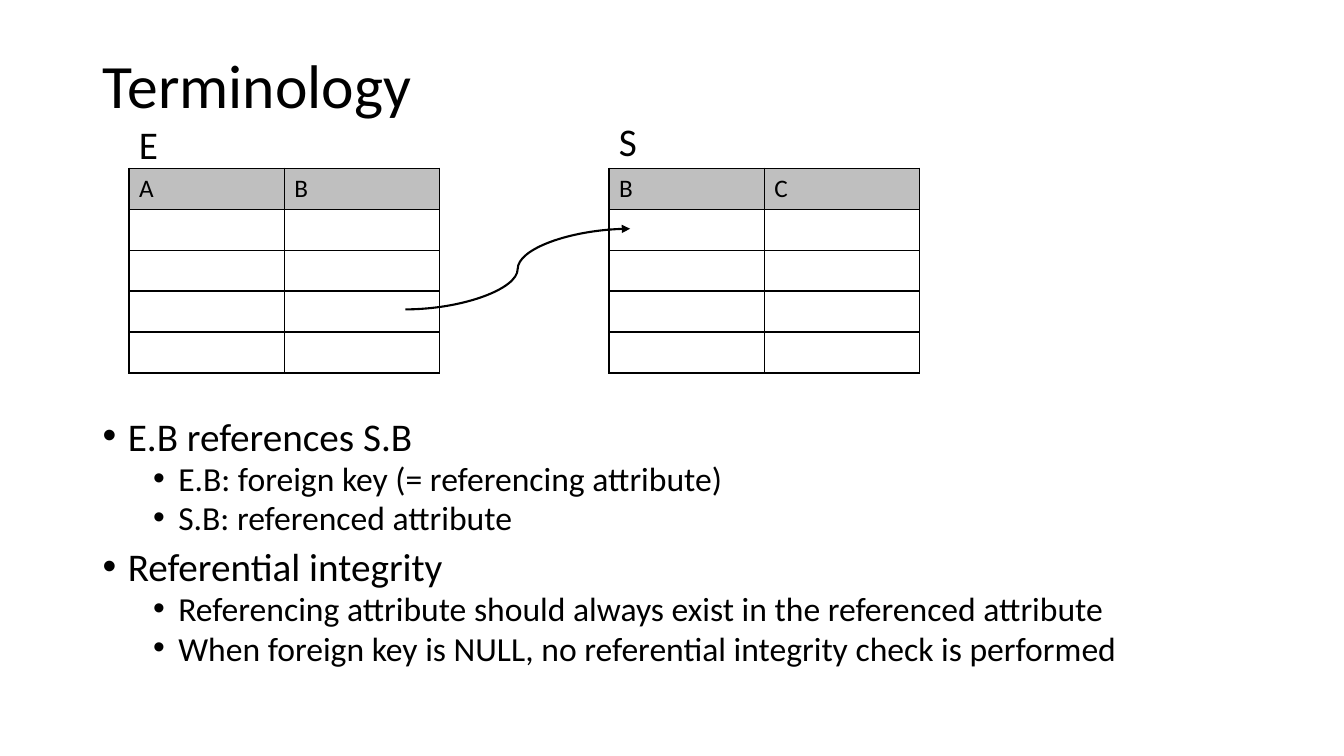
import pptx
import pptx.dml.color
import pptx.enum.shapes
import pptx.enum.text
import pptx.oxml
import pptx.oxml.ns
import pptx.util
from pptx.util import Inches

NAMESPACE = pptx.oxml.ns.nsdecls("a")
BLACK = "000000"
HEADER_GREY = "BFBFBF"


def color(value):
    return pptx.dml.color.RGBColor.from_string(value)


def add_text(para, text, size):
    span = para.add_run()
    span.text = text
    span.font.name = "Calibri"
    span.font.size = pptx.util.Pt(size)
    span.font.color.rgb = color(BLACK)


deck = pptx.Presentation()
deck.slide_width = Inches(13.33)
deck.slide_height = Inches(7.5)
page = deck.slides.add_slide(deck.slide_layouts[5])

title = page.shapes.title
title.left, title.top = Inches(0.92), Inches(0.33)
title.width, title.height = Inches(11.5), Inches(1.09)
title.text_frame.auto_size = pptx.enum.text.MSO_AUTO_SIZE.NONE
title.text_frame.vertical_anchor = pptx.enum.text.MSO_ANCHOR.MIDDLE
title_para = title.text_frame.paragraphs[0]
title_para.alignment = pptx.enum.text.PP_ALIGN.LEFT
title_para.line_spacing = 0.9
add_text(title_para, "Terminology", 44)

# Relations: name, left edge, top of the name, attributes
relations = [
    ("E", 1.28, 1.14, ["A", "B"]),
    ("S", 6.04, 1.11, ["B", "C"]),
]
for name, left, name_top, attributes in relations:
    table = page.shapes.add_table(
        5, 2, Inches(left), Inches(1.67), Inches(3.08), Inches(2.03)).table
    table.first_row = False
    table.horz_banding = False
    for cell in table.iter_cells():
        properties = cell._tc.get_or_add_tcPr()
        for side in ("lnL", "lnR", "lnT", "lnB"):
            properties.append(pptx.oxml.parse_xml(
                f'<a:{side} {NAMESPACE} w="12700"><a:solidFill>'
                f'<a:srgbClr val="{BLACK}"/></a:solidFill></a:{side}>'))
        cell.fill.background()
    for column, attribute in enumerate(attributes):
        header = table.cell(0, column)
        header.fill.solid()
        header.fill.fore_color.rgb = color(HEADER_GREY)
        add_text(header.text_frame.paragraphs[0], attribute, 18)

    label = page.shapes.add_textbox(
        Inches(left), Inches(name_top), Inches(0.39), Inches(0.57))
    label.text_frame.word_wrap = False
    label.text_frame.auto_size = pptx.enum.text.MSO_AUTO_SIZE.SHAPE_TO_FIT_TEXT
    add_text(label.text_frame.paragraphs[0], name, 28)

reference = page.shapes.add_connector(
    pptx.enum.shapes.MSO_CONNECTOR.CURVE,
    Inches(4.02), Inches(3.07), Inches(6.25), Inches(2.27))
reference.line.color.rgb = color(BLACK)
reference.line.width = pptx.util.Pt(1.5)
reference.line._get_or_add_ln().append(
    pptx.oxml.parse_xml(f'<a:tailEnd {NAMESPACE} type="triangle"/>'))
reference._element.spPr.append(
    pptx.oxml.parse_xml(f"<a:effectLst {NAMESPACE}/>"))

# Text and level of each bullet
bullets = [
    ("E.B references S.B", 0),
    ("E.B: foreign key (= referencing attribute)", 1),
    ("S.B: referenced attribute", 1),
    ("Referential integrity", 0),
    ("Referencing attribute should always exist in the referenced attribute", 1),
    ("When foreign key is NULL, no referential integrity check is performed", 1),
]
# Size, space before and left margin of each level
levels = [(28, 10, 0.25), (24, 5, 0.75)]

body = page.shapes.add_textbox(
    Inches(0.92), Inches(4.13), Inches(11.5), Inches(2.63))
body.text_frame.word_wrap = True
for index, (text, level) in enumerate(bullets):
    size, space_before, margin = levels[level]
    para = body.text_frame.add_paragraph() if index else body.text_frame.paragraphs[0]
    para.level = level
    para.line_spacing = 0.8
    para.space_before = pptx.util.Pt(space_before)
    properties = para._p.get_or_add_pPr()
    properties.set("marL", str(Inches(margin)))
    properties.set("indent", str(Inches(-0.25)))
    properties.append(pptx.oxml.parse_xml(
        f'<a:buFont {NAMESPACE} typeface="Arial"/>'))
    properties.append(pptx.oxml.parse_xml(f'<a:buChar {NAMESPACE} char="•"/>'))
    add_text(para, text, size)

deck.save("out.pptx")
